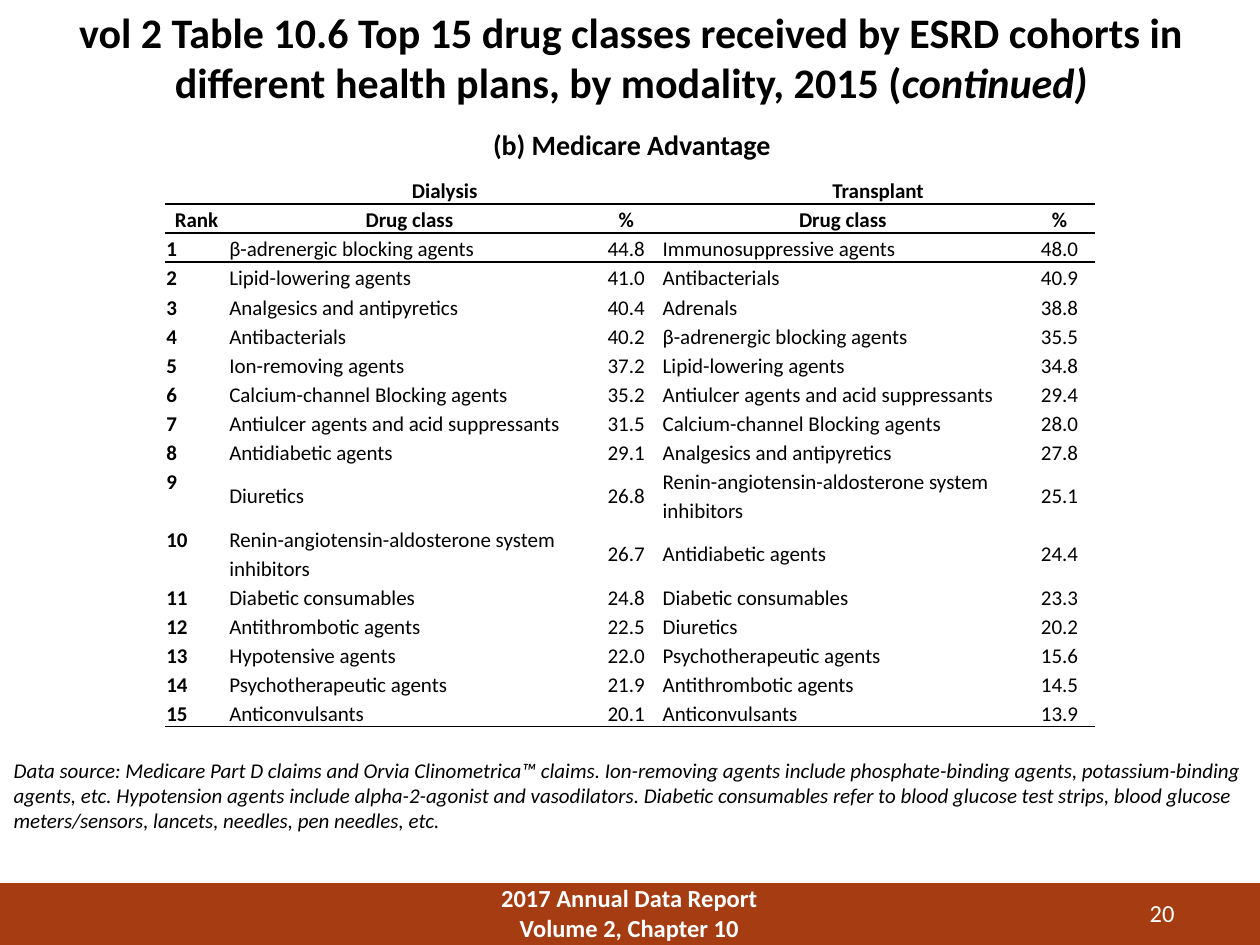
from typing import NamedTuple

from lxml import etree
from pptx import Presentation
from pptx import util as u
from pptx.dml import color
from pptx.enum import shapes, text
from pptx.oxml import ns

FONT = "Calibri"
BLACK, WHITE, RUST = "000000", "FFFFFF", "A63C12"
LEFT, CENTER, RIGHT = text.PP_ALIGN.LEFT, text.PP_ALIGN.CENTER, text.PP_ALIGN.RIGHT
NO_GRID_STYLE = "{2D5ABB26-0587-4C30-8999-92F81FD0307C}"


class Label(NamedTuple):
    lines: list[list[str]]  # paragraphs, each a list of runs
    left: float
    top: float
    width: float
    height: float
    size: float
    align: text.PP_ALIGN = CENTER
    bold: bool = False
    italics: tuple[bool, ...] = (False,)
    hue: str = BLACK


class DrugRow(NamedTuple):
    dialysis: str
    dialysis_share: str
    transplant: str
    transplant_share: str


LABELS = [
    Label([["2017 Annual Data Report"], ["Volume 2, Chapter 10"]],
          257.76, 501.12, 203.76, 23.76, 14, bold=True, hue=WHITE),
    Label([["20"]], 606.24, 509.76, 72, 21.6, 14, RIGHT, hue=WHITE),
    Label([["vol 2 Table 10.6 Top 15 drug classes received by ESRD cohorts in "
            "different health plans, by modality, 2015 (", "continued)"]],
          0.72, 0, 720, 62.64, 24, bold=True, italics=(False, True)),
    Label([["Data source: Medicare Part D claims and Orvia Clinometrica™ claims. "
            "Ion-removing agents include phosphate-binding agents, potassium-binding "
            "agents, etc. Hypotension agents include alpha-2-agonist and vasodilators. "
            "Diabetic consumables refer to blood glucose test strips, blood glucose "
            "meters/sensors, lancets, needles, pen needles, etc."]],
          0.72, 429.12, 719.28, 51.12, 12, LEFT, italics=(True,)),
    Label([["(b) Medicare Advantage"]], 264.24, 69.12, 193.68, 26.64, 16, bold=True),
]

DRUG_ROWS = [
    DrugRow("β-adrenergic blocking agents", "44.8", "Immunosuppressive agents", "48.0"),
    DrugRow("Lipid-lowering agents", "41.0", "Antibacterials", "40.9"),
    DrugRow("Analgesics and antipyretics", "40.4", "Adrenals", "38.8"),
    DrugRow("Antibacterials", "40.2", "β-adrenergic blocking agents", "35.5"),
    DrugRow("Ion-removing agents", "37.2", "Lipid-lowering agents", "34.8"),
    DrugRow("Calcium-channel Blocking agents", "35.2",
            "Antiulcer agents and acid suppressants", "29.4"),
    DrugRow("Antiulcer agents and acid suppressants", "31.5",
            "Calcium-channel Blocking agents", "28.0"),
    DrugRow("Antidiabetic agents", "29.1", "Analgesics and antipyretics", "27.8"),
    DrugRow("Diuretics", "26.8", "Renin-angiotensin-aldosterone system inhibitors", "25.1"),
    DrugRow("Renin-angiotensin-aldosterone system inhibitors", "26.7",
            "Antidiabetic agents", "24.4"),
    DrugRow("Diabetic consumables", "24.8", "Diabetic consumables", "23.3"),
    DrugRow("Antithrombotic agents", "22.5", "Diuretics", "20.2"),
    DrugRow("Hypotensive agents", "22.0", "Psychotherapeutic agents", "15.6"),
    DrugRow("Psychotherapeutic agents", "21.9", "Antithrombotic agents", "14.5"),
    DrugRow("Anticonvulsants", "20.1", "Anticonvulsants", "13.9"),
]
COLUMN_WIDTHS = [36, 207.36, 40.32, 207.36, 40.32]
ROW_HEIGHT = 16.56
HEADER_ROWS = 2


def rgb(value: str) -> color.RGBColor:
    return color.RGBColor.from_string(value)


def style_run(run, size: float, hue: str, bold: bool, italic: bool = False) -> None:
    run.font.name = FONT
    run.font.size = u.Pt(size)
    run.font.bold = bold
    run.font.italic = italic
    run.font.color.rgb = rgb(hue)


def add_label(slide, label: Label) -> None:
    box = slide.shapes.add_textbox(*map(u.Pt, label[1:5]))
    frame = box.text_frame
    frame.word_wrap = True
    for index, pieces in enumerate(label.lines):
        paragraph = frame.add_paragraph() if index else frame.paragraphs[0]
        paragraph.alignment = label.align
        for piece, italic in zip(pieces, label.italics):
            run = paragraph.add_run()
            run.text = piece
            style_run(run, label.size, label.hue, label.bold, italic)


def add_border(cell, position: int, side: str) -> None:
    properties = cell._tc.get_or_add_tcPr()
    line = etree.Element(ns.qn(f"a:{side}"), w=str(u.Pt(1)))
    fill = etree.SubElement(line, ns.qn("a:solidFill"))
    etree.SubElement(fill, ns.qn("a:srgbClr"), val=BLACK)
    properties.insert(position, line)


def fill_cell(cell, value: str, row: int, column: int) -> None:
    header = row < HEADER_ROWS
    rank = column == 0 and not header
    cell.fill.background()
    cell.margin_left = cell.margin_right = u.Pt(0.72)
    cell.margin_top = cell.margin_bottom = u.Pt(0)
    cell.vertical_anchor = text.MSO_ANCHOR.TOP if rank else text.MSO_ANCHOR.MIDDLE
    paragraph = cell.text_frame.paragraphs[0]
    paragraph.line_spacing = 1.15
    paragraph.alignment = CENTER if header or column in (2, 4) else LEFT
    if value:
        paragraph.text = value
        style_run(paragraph.runs[0], 12, BLACK, header or rank)
    else:
        # An empty cell needs its own text size to keep the row low
        etree.SubElement(paragraph._p, ns.qn("a:endParaRPr"), sz="1200")


def add_drug_table(slide) -> None:
    grid = [["", "Dialysis", "", "Transplant", ""],
            ["Rank", "Drug class", "%", "Drug class", "%"]]
    grid += [[str(rank), *drugs] for rank, drugs in enumerate(DRUG_ROWS, 1)]
    frame = slide.shapes.add_table(
        len(grid), len(COLUMN_WIDTHS), u.Pt(94.32), u.Pt(100.08),
        u.Pt(sum(COLUMN_WIDTHS)), u.Pt(ROW_HEIGHT * len(grid)))
    table = frame.table
    table.first_row = table.horz_banding = False
    next(frame.element.iter(ns.qn("a:tableStyleId"))).text = NO_GRID_STYLE
    for column, width in zip(table.columns, COLUMN_WIDTHS):
        column.width = u.Pt(width)
    for row, values in enumerate(grid):
        table.rows[row].height = u.Pt(ROW_HEIGHT)
        for column, value in enumerate(values):
            cell = table.cell(row, column)
            fill_cell(cell, value, row, column)
            # Rules under both header rows and under the last row
            sides = ["lnT"] if row in (1, HEADER_ROWS) else []
            if row < HEADER_ROWS or row == len(grid) - 1:
                sides.append("lnB")
            for position, side in enumerate(sides):
                add_border(cell, position, side)
    for column in (1, 3):
        table.cell(0, column).merge(table.cell(0, column + 1))


def main() -> None:
    presentation = Presentation()
    presentation.slide_width, presentation.slide_height = u.Pt(720), u.Pt(540)
    slide = presentation.slides.add_slide(presentation.slide_layouts[6])

    # Footer band
    band = slide.shapes.add_shape(shapes.MSO_SHAPE.RECTANGLE,
                                  u.Pt(0), u.Pt(504.72), u.Pt(720), u.Pt(36))
    band.shadow.inherit = False
    band.fill.solid()
    band.fill.fore_color.rgb = rgb(RUST)
    band.line.fill.background()

    # Footer text, title, note and subtitle
    for label in LABELS:
        add_label(slide, label)

    # Ranked drug classes
    add_drug_table(slide)
    presentation.save("out.pptx")


if __name__ == "__main__":
    main()
